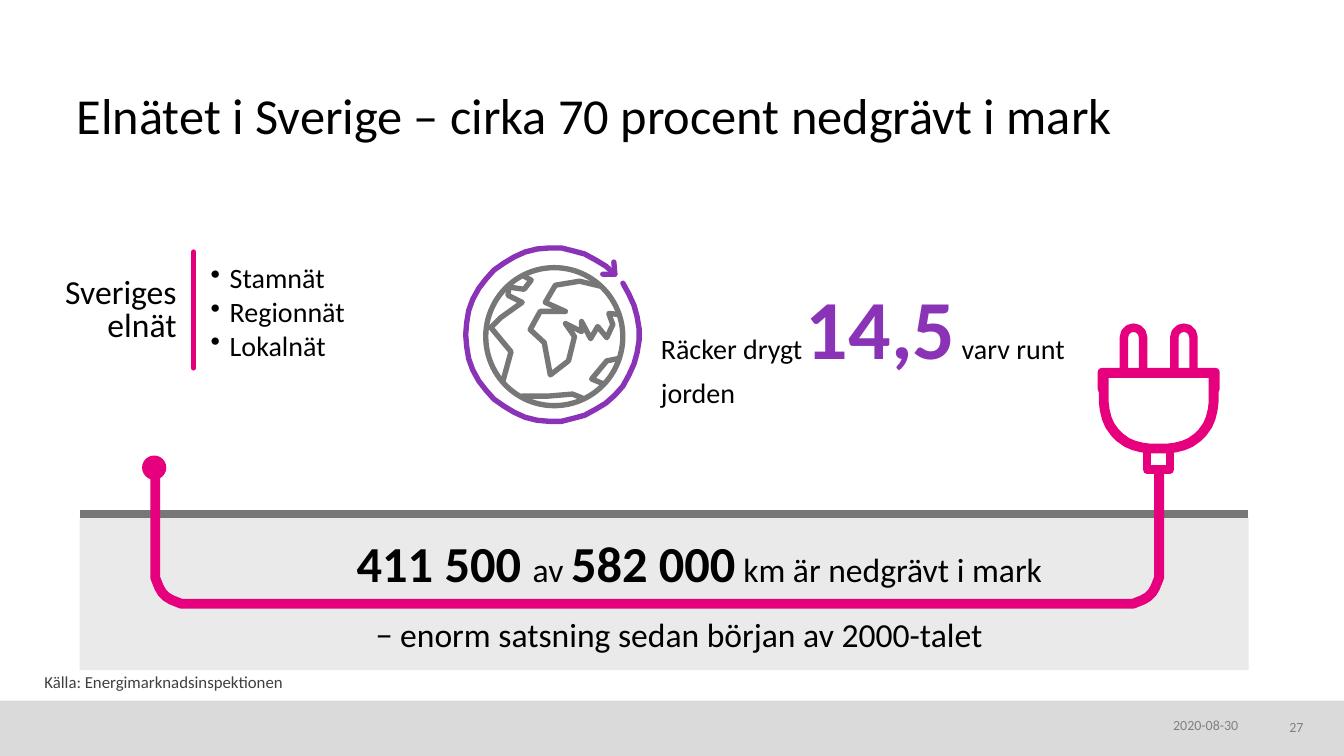
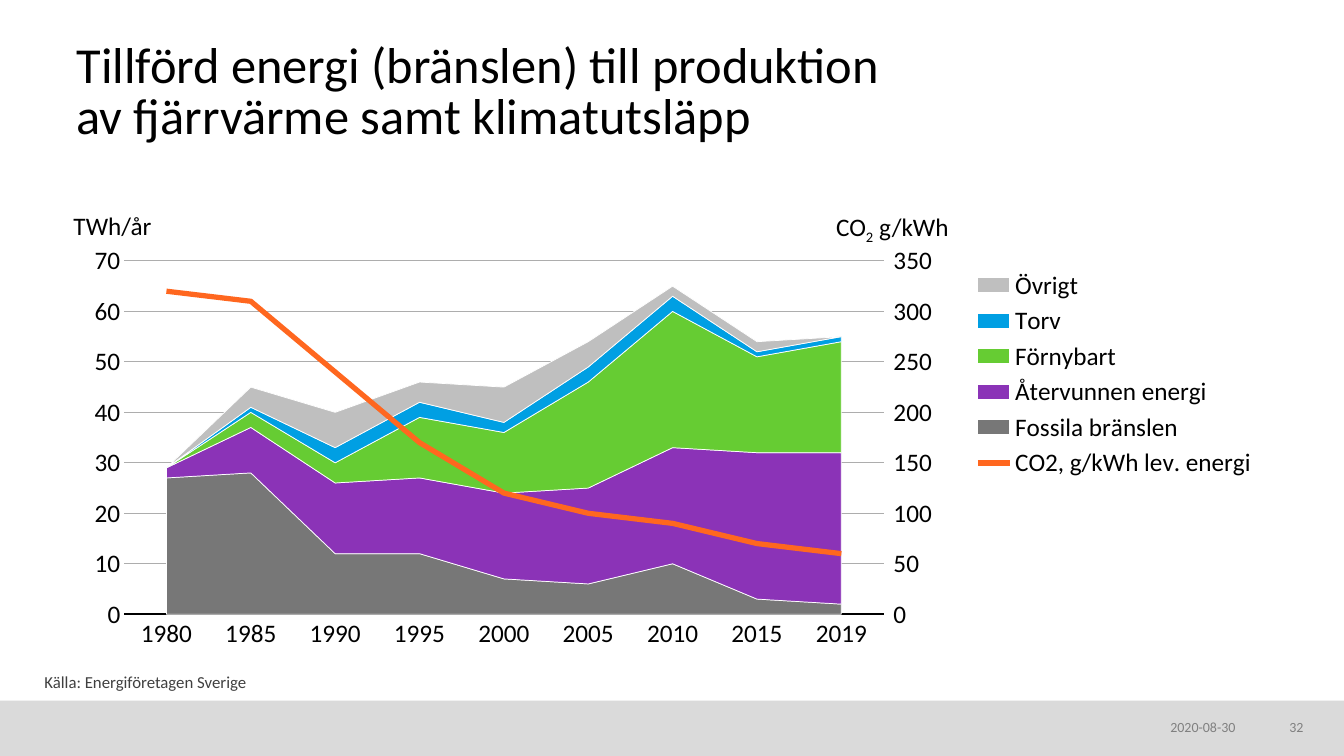
"""Builds two slides on the Swedish power grid and district heating."""
from copy import deepcopy
from math import cos, radians, sin

from lxml.etree import SubElement
from pptx import Presentation
from pptx.chart.data import CategoryChartData
from pptx.dml.color import RGBColor
from pptx.enum.chart import XL_CHART_TYPE, XL_LEGEND_POSITION, XL_MARKER_STYLE, XL_TICK_MARK
from pptx.enum.shapes import MSO_CONNECTOR, MSO_SHAPE
from pptx.enum.text import MSO_ANCHOR, PP_ALIGN
from pptx.oxml import parse_xml
from pptx.oxml.ns import nsdecls, qn
from pptx.util import Pt

BLACK = RGBColor(0x00, 0x00, 0x00)
WHITE = RGBColor(0xFF, 0xFF, 0xFF)
DARK = RGBColor(0x40, 0x40, 0x40)
MUTED = RGBColor(0x80, 0x80, 0x80)
GRAY = RGBColor(0x77, 0x77, 0x77)
SILVER = RGBColor(0xBF, 0xBF, 0xBF)
GRID = RGBColor(0xAD, 0xAD, 0xAD)
BAND = RGBColor(0xDA, 0xDA, 0xDA)
PINK = RGBColor(0xE6, 0x00, 0x7E)
ROSE = RGBColor(0xE1, 0x00, 0x7B)
PURPLE = RGBColor(0x8B, 0x33, 0xB7)
GREEN = RGBColor(0x66, 0xCC, 0x33)
BLUE = RGBColor(0x00, 0x9F, 0xE3)
ORANGE = RGBColor(0xFF, 0x67, 0x1F)
FONT = "Calibri"
UNIT = Pt(0.72)


def write(page, box, paras, look, inset=True, bullet=False, **layout):
    """Adds a text box; each paragraph is a list of (text, changes)."""
    frame = page.shapes.add_textbox(*map(Pt, box)).text_frame
    frame.word_wrap = True
    frame.vertical_anchor = layout.pop("anchor", MSO_ANCHOR.TOP)
    if not inset:
        for side in ("left", "top", "right", "bottom"):
            setattr(frame, "margin_" + side, 0)
    for i, runs in enumerate(paras):
        para = frame.add_paragraph() if i else frame.paragraphs[0]
        for key, value in layout.items():
            setattr(para, key, value)
        if bullet:
            props = para._p.get_or_add_pPr()
            props.set("marL", str(Pt(13.7)))
            props.set("indent", str(-Pt(13.7)))
            SubElement(props, qn("a:buChar")).set("char", "•")
        for words, change in runs:
            style = {"size": 18, "name": FONT, "bold": False, "color": BLACK, **look, **change}
            shift = style.pop("shift", 0)
            color = style.pop("color")
            style["size"] = Pt(style["size"])
            for j, line in enumerate(words.split("\n")):
                if j:
                    para.add_line_break()
                run = para.add_run()
                run.text = line
                run.font.color.rgb = color
                for key, value in style.items():
                    setattr(run.font, key, value)
                if shift:
                    run.font._element.set("baseline", str(shift * 1000))


def dress(shape, fill=None, line=None, width=0):
    """Sets fill and line, rounds the line and drops the shadow."""
    if fill is not None:
        shape.fill.solid()
        shape.fill.fore_color.rgb = fill
    elif hasattr(shape, "fill"):
        shape.fill.background()
    if line is None:
        shape.line.fill.background()
    else:
        shape.line.color.rgb = line
        shape.line.width = Pt(width)
        pen = shape.line._get_or_add_ln()
        pen.set("cap", "rnd")
        SubElement(pen, qn("a:round"))
    SubElement(shape._element.spPr, qn("a:effectLst"))


deck = Presentation()
deck.slide_width, deck.slide_height = Pt(960), Pt(540)
pages = []
for title, source, number, date in (
    ("Elnätet i Sverige – cirka 70 procent nedgrävt i mark",
     "Källa: Energimarknadsinspektionen", "27", (838, 512)),
    ("Tillförd energi (bränslen) till produktion\nav fjärrvärme samt klimatutsläpp",
     "Källa: Energiföretagen Sverige", "32", (836, 513.4)),
):
    page = deck.slides.add_slide(deck.slide_layouts[6])
    pages.append(page)
    write(page, (54.7, 26.6, 855, 77), [[(title, {})]], {"size": 36}, inset=False,
          anchor=MSO_ANCHOR.BOTTOM, line_spacing=0.85)
    write(page, (31.7, 479.5, 350, 16.6), [[(source, {})]], {"size": 12, "color": DARK},
          inset=False, anchor=MSO_ANCHOR.MIDDLE, line_spacing=0.9)
    small = {"size": 10, "color": MUTED}
    write(page, (*date, 53.3, 14), [[("2020-08-30", {})]], small, inset=False)
    write(page, (903, 513.4, 28, 14), [[(number, {})]], small, inset=False,
          alignment=PP_ALIGN.RIGHT)

grid, heat = pages
band = grid.shapes.add_shape(MSO_SHAPE.RECTANGLE, 0, Pt(500.4), Pt(960), Pt(39.6))
dress(band, BAND)
deck.slide_master.shapes.element.append(band._element)

soil = grid.shapes.add_shape(MSO_SHAPE.RECTANGLE, Pt(56.9), Pt(370), Pt(835), Pt(108.7))
dress(soil, SILVER)
tint = soil._element.spPr.find(".//" + qn("a:srgbClr"))
SubElement(tint, qn("a:alpha")).set("val", "32000")
for ends, color, width in (
    ((56.9, 367.2, 891.4, 367.2), GRAY, 6),
    ((138.2, 180, 138.2, 262.8), ROSE, 3.75),
):
    rule = grid.shapes.add_connector(MSO_CONNECTOR.STRAIGHT, *map(Pt, ends))
    dress(rule, None, color, width)
    if color == GRAY:
        rule.line._get_or_add_ln().set("cap", "flat")

write(grid, (143.3, 182.9, 281, 80),
      [[(name, {})] for name in ("Stamnät", "Regionnät", "Lokalnät")],
      {"size": 20}, bullet=True)
big = {"size": 36, "bold": True}
write(grid, (247.7, 381.6, 508, 47.5),
      [[("411 500 ", big), ("av ", {}), ("582 000", big), (" km är nedgrävt i mark", {})]],
      {"size": 24}, line_spacing=0.9)
write(grid, (261.4, 438.5, 457, 33), [[("− enorm satsning sedan början av 2000-talet", {})]],
      {"size": 24}, line_spacing=0.9)
write(grid, (38.2, 195.8, 95, 54.7), [[("Sveriges\nelnät", {})]], {"size": 24},
      alignment=PP_ALIGN.RIGHT, line_spacing=0.8)
write(grid, (465, 193, 327, 106),
      [[("Räcker drygt", {}), (" ", {"size": 11}),
        ("14,5", {"size": 60, "bold": True, "color": PURPLE}), (" varv runt jorden", {})]],
      {"size": 20})

globe = grid.shapes.add_shape(MSO_SHAPE.OVAL, Pt(347), Pt(191.2), Pt(97.9), Pt(98.6))
dress(globe, None, GRAY, 3.84)
orbit = [(548 + 86 * cos(radians(a)), 332 + 86 * sin(radians(a))) for a in range(-44, -397, -8)]
coasts = [
    [(612, 356), (602, 358), (587, 376), (599, 381)],
    [(596, 284), (575, 279), (551, 283), (541, 300), (561, 309), (536, 309), (526, 327),
     (540, 340), (546, 372), (564, 358), (570, 334), (561, 321), (577, 329), (577, 319),
     (586, 336), (593, 324), (602, 335), (608, 322), (604, 311), (614, 312)],
    [(506, 285), (520, 287), (527, 278), (520, 274)],
    [(505, 284), (504, 293), (518, 300), (497, 315), (487, 325), (507, 349), (499, 378)],
    [(578, 395), (568, 391), (544, 393), (518, 393)],
]
arrow = [(598, 272), (610, 272), (609, 260)]
for trail, color in [(c, GRAY) for c in coasts] + [(orbit, PURPLE), (arrow, PURPLE)]:
    pen = grid.shapes.build_freeform(*trail[0], UNIT)
    pen.add_line_segments(trail[1:], close=False)
    dress(pen.convert_to_shape(), None, color, 3.84)

for kind, box, fill, width in (
    (MSO_SHAPE.OVAL, (101.5, 325.4, 17.3, 17.3), PINK, 0),
    (MSO_SHAPE.ROUND_2_SAME_RECTANGLE, (802.8, 234, 13.7, 32), WHITE, 6),
    (MSO_SHAPE.ROUND_2_SAME_RECTANGLE, (838.8, 234, 13.7, 32), WHITE, 6),
    (MSO_SHAPE.ROUNDED_RECTANGLE, (784.1, 262.8, 87.1, 18), PINK, 0),
    (None, (154, 1150, 464, 599, 32), None, 7),
    (MSO_SHAPE.RECTANGLE, (819.4, 318, 16.4, 17.5), WHITE, 6),
    (None, (1095, 1204, 370, 445, 46), WHITE, 7),
):
    if kind is None:
        left, right, top, base, bend = box
        trail = [(mid + bend * cos(radians(a)), base - bend + bend * sin(radians(a)))
                 for mid, turn in ((left + bend, 180), (right - bend, 90))
                 for a in range(turn, turn - 91, -10)]
        pen = grid.shapes.build_freeform(left, top, UNIT)
        pen.add_line_segments(trail + [(right, top)], close=fill is not None)
        part = pen.convert_to_shape()
    else:
        part = grid.shapes.add_shape(kind, *map(Pt, box))
        if kind == MSO_SHAPE.ROUND_2_SAME_RECTANGLE:
            part.adjustments[0] = 0.5
    dress(part, fill, PINK if width else None, width)

series = (
    ("Fossila bränslen", (27, 28, 12, 12, 7, 6, 10, 3, 2), GRAY),
    ("Återvunnen energi", (2, 9, 14, 15, 17, 19, 23, 29, 30), PURPLE),
    ("Förnybart", (0, 3, 4, 12, 12, 21, 27, 19, 22), GREEN),
    ("Torv", (0, 1, 3, 3, 2, 3, 3, 1, 1), BLUE),
    ("Övrigt", (0, 4, 7, 4, 7, 5, 2, 2, 0), SILVER),
    ("CO2, g/kWh lev. energi", (320, 310, 240, 170, 120, 100, 90, 70, 60), ORANGE),
)
data = CategoryChartData()
data.categories = [str(year) for year in range(1980, 2016, 5)] + ["2019"]
for name, values, _ in series:
    data.add_series(name, values)
chart = heat.shapes.add_chart(XL_CHART_TYPE.AREA_STACKED, Pt(31.7), Pt(121), Pt(877.7),
                              Pt(353.5), data).chart
chart.has_title = False
chart.font.name = FONT
chart.font.size = Pt(18)
chart.font.color.rgb = BLACK
chart.has_legend = True
chart.legend.position = XL_LEGEND_POSITION.RIGHT
chart.legend.include_in_layout = False
years, energy = chart.category_axis, chart.value_axis
for axis in (years, energy):
    axis.visible = True
    axis.major_tick_mark = axis.minor_tick_mark = XL_TICK_MARK.NONE
    axis.tick_labels.font.size = Pt(18)
    axis.tick_labels.font.color.rgb = BLACK
years.has_major_gridlines = False
years.format.line.color.rgb = BLACK
years.format.line.width = Pt(1.5)
for key, value in {"minimum_scale": 0, "maximum_scale": 70, "major_unit": 10}.items():
    setattr(energy, key, value)
energy.tick_labels.number_format = "#,##0"
energy.tick_labels.number_format_is_linked = False
energy.format.line.fill.background()
energy.has_major_gridlines = True
energy.major_gridlines.format.line.color.rgb = GRID
energy.major_gridlines.format.line.width = Pt(0.75)
energy._element.find(qn("c:crossBetween")).set("val", "between")

plot = chart._chartSpace.chart.plotArea
area = plot.find(qn("c:areaChart"))
curve = parse_xml(f'<c:lineChart {nsdecls("c")}><c:grouping val="standard"/>'
                  '<c:varyColors val="0"/><c:marker val="1"/>'
                  '<c:axId val="5001"/><c:axId val="5002"/></c:lineChart>')
curve.insert(2, area.findall(qn("c:ser"))[-1])
area.addnext(curve)
for axis, changes in (
    (energy, {"axId": 5002, "crossAx": 5001, "axPos": "r", "crosses": "max", "max": 350,
              "majorUnit": 50, "majorTickMark": "out"}),
    (years, {"axId": 5001, "crossAx": 5002, "delete": 1}),
):
    twin = deepcopy(axis._element)
    for lines in twin.findall(qn("c:majorGridlines")):
        twin.remove(lines)
    for tag, value in changes.items():
        for node in twin.iter(qn("c:" + tag)):
            node.set("val", str(value))
    energy._element.addnext(twin)

legend = chart.legend._element
for owner in (plot, legend):
    for old in owner.findall(qn("c:layout")):
        owner.remove(old)
for inner, values in ((True, {"x": 0.065, "y": 0.185, "w": 0.618, "h": 0.714}),
                      (False, {"x": 0.753, "y": 0.193})):
    place = parse_xml(f'<c:layout {nsdecls("c")}><c:manualLayout/></c:layout>')
    rules = {"layoutTarget": "inner"} if inner else {}
    for tag, value in {**rules, "xMode": "edge", "yMode": "edge", **values}.items():
        SubElement(place[0], qn("c:" + tag)).set("val", str(value))
    if inner:
        plot.insert(0, place)
    else:
        legend.find(qn("c:legendPos")).addnext(place)

stack, trend = chart.plots
stack.vary_by_categories = trend.vary_by_categories = False
for item, (_, _, color) in zip(stack.series, series):
    item.format.fill.solid()
    item.format.fill.fore_color.rgb = color
    item.format.line.color.rgb = WHITE
    item.format.line.width = Pt(0.5)
carbon = trend.series[0]
carbon.smooth = False
carbon.marker.style = XL_MARKER_STYLE.NONE
carbon.format.line.color.rgb = ORANGE
carbon.format.line.width = Pt(3.75)

write(heat, (45.4, 149, 85.7, 26.6), [[("TWh/år", {})]], {},
      anchor=MSO_ANCHOR.MIDDLE, line_spacing=0.9)
write(heat, (547.2, 149, 137.5, 26.6), [[("CO", {}), ("2", {"shift": -25}), (" g/kWh", {})]], {},
      anchor=MSO_ANCHOR.MIDDLE, alignment=PP_ALIGN.RIGHT, line_spacing=0.9)

deck.save("out.pptx")
